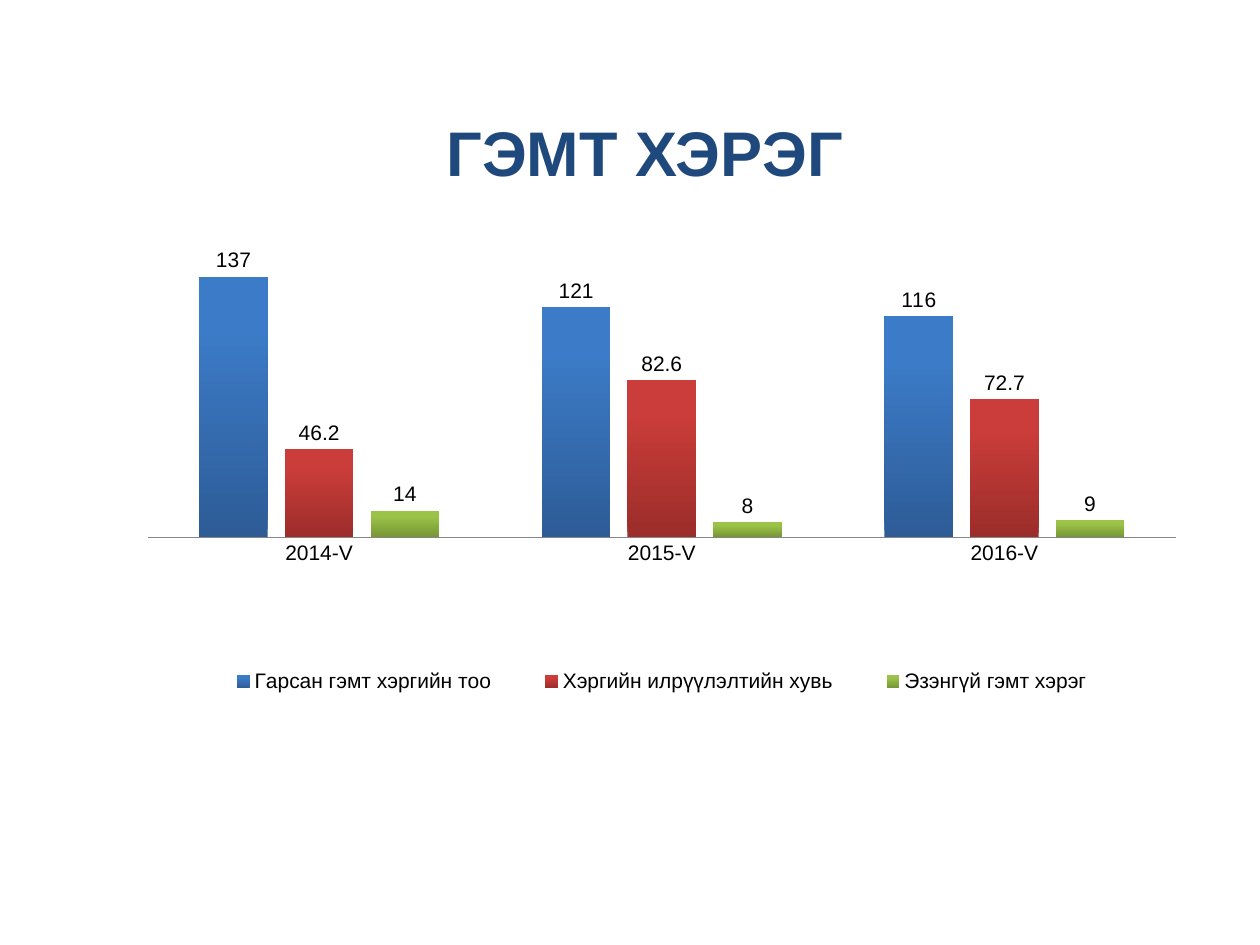
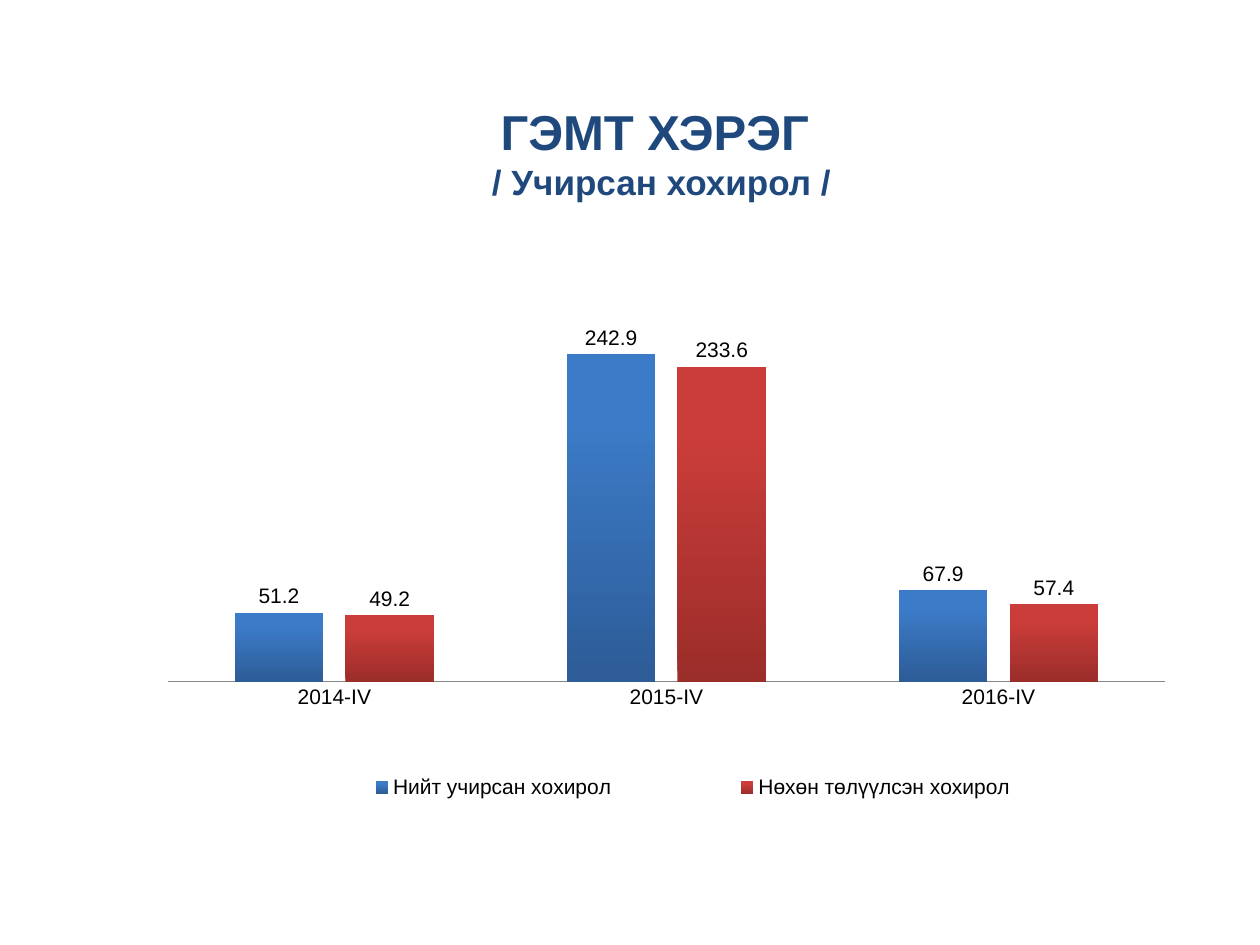
from lxml.etree import SubElement
from pptx import Presentation
from pptx.chart.data import CategoryChartData
from pptx.dml.color import RGBColor
from pptx.enum.chart import XL_CHART_TYPE as ChartType
from pptx.enum.chart import XL_LABEL_POSITION as LabelPos
from pptx.enum.chart import XL_LEGEND_POSITION as LegendPos
from pptx.enum.chart import XL_TICK_MARK as Tick
from pptx.enum.text import MSO_ANCHOR as Anchor
from pptx.enum.text import PP_ALIGN as Align
from pptx.oxml import parse_xml
from pptx.oxml.ns import nsdecls, qn
from pptx.util import Cm, Pt

FONT = "Arial"
NAVY = RGBColor(0x1F, 0x49, 0x7D)
BLACK = RGBColor(0, 0, 0)
WHITE = RGBColor(0xFF, 0xFF, 0xFF)
GRAY = RGBColor(0x86, 0x86, 0x86)
# (bottom, top) of each series' gradient
BAR_SHADES = [
    (RGBColor(0x2D, 0x5C, 0x97), RGBColor(0x3C, 0x7B, 0xC7)),
    (RGBColor(0x9B, 0x2D, 0x2A), RGBColor(0xCB, 0x3D, 0x3A)),
    (RGBColor(0x76, 0x95, 0x35), RGBColor(0x9B, 0xC3, 0x48)),
]


def add_text(p, text, size=28, color=NAVY, bold=True):
    r = p.add_run()
    r.text = text
    font = r.font
    font.name, font.size, font.bold = FONT, Pt(size), bold
    font.color.rgb = color


def set_layout(parent, box, inner=False):
    """Place a chart part by left, top, width and height fractions."""
    old = parent.find(qn("c:layout"))
    if old is not None:
        parent.remove(old)
    layout = parse_xml(f"<c:layout {nsdecls('c')}/>")
    manual = SubElement(layout, qn("c:manualLayout"))
    if inner:
        SubElement(manual, qn("c:layoutTarget")).set("val", "inner")
    for tag in ("xMode", "yMode"):
        SubElement(manual, qn(f"c:{tag}")).set("val", "edge")
    for tag, value in zip("xywh", box):
        SubElement(manual, qn(f"c:{tag}")).set("val", str(value))
    # The layout comes first in the plot area, after the position in a legend
    parent.insert(0 if inner else 1, layout)


class Deck:
    def __init__(self):
        self.prs = Presentation()
        self.prs.slide_width, self.prs.slide_height = Cm(25.4), Cm(19.05)
        self.slide = None

    def new_slide(self):
        self.slide = self.prs.slides.add_slide(self.prs.slide_layouts[6])

    def title(self, box, *lines):
        """Centred title; each line is a (text, size) pair."""
        tf = self.slide.shapes.add_textbox(*map(Cm, box)).text_frame
        tf.word_wrap = True
        tf.vertical_anchor = Anchor.MIDDLE
        p = tf.paragraphs[0]
        p.alignment = Align.CENTER
        for i, (text, size) in enumerate(lines):
            if i:
                p.add_line_break()
            add_text(p, text, size=size)

    def column_chart(self, box, categories, series, maximum, plot_box, legend_box):
        """Clustered columns; each series is (name, values, number format)."""
        data = CategoryChartData()
        data.categories = categories
        for name, values, number_format in series:
            data.add_series(name, values, number_format)
        chart = self.slide.shapes.add_chart(
            ChartType.COLUMN_CLUSTERED, *map(Cm, box), data).chart
        chart.has_title = False
        chart.font.name, chart.font.size = FONT, Pt(12)
        chart.font.color.rgb = BLACK
        self.chart_border(chart)
        self.axes(chart, maximum)

        plot = chart.plots[0]
        plot.gap_width, plot.overlap = 150, -25
        plot.vary_by_categories = False
        for bars, shades, (_, _, number_format) in zip(plot.series, BAR_SHADES, series):
            self.bar_style(bars, shades, number_format)

        chart.has_legend = True
        legend = chart.legend
        legend.position = LegendPos.TOP
        legend.include_in_layout = False
        plot_area = chart._chartSpace.chart.plotArea
        set_layout(plot_area, plot_box, inner=True)
        set_layout(legend._element, legend_box)

    def chart_border(self, chart):
        sp_pr = parse_xml(
            f'<c:spPr {nsdecls("c", "a")}><a:ln w="9525"><a:solidFill>'
            f'<a:srgbClr val="{WHITE}"/></a:solidFill></a:ln></c:spPr>')
        chart._chartSpace.chart.addnext(sp_pr)

    def axes(self, chart, maximum):
        cat_axis, val_axis = chart.category_axis, chart.value_axis
        cat_axis.major_tick_mark = cat_axis.minor_tick_mark = Tick.NONE
        cat_axis.format.line.color.rgb = GRAY
        cat_axis.format.line.width = Pt(0.75)
        val_axis.minimum_scale, val_axis.maximum_scale = 0, maximum
        val_axis.has_major_gridlines = False
        val_axis.visible = False

    def bar_style(self, bars, shades, number_format):
        fill = bars.format.fill
        fill.gradient()
        fill.gradient_angle = 90
        for stop, shade, position in zip(fill.gradient_stops, shades, (0, 0.8)):
            stop.color.rgb = shade
            stop.position = position
        labels = bars.data_labels
        labels.show_value = True
        labels.position = LabelPos.OUTSIDE_END
        labels.number_format = number_format
        labels.number_format_is_linked = False


def main():
    deck = Deck()

    deck.new_slide()
    deck.title((4.01, 2.11, 17.98, 1.9), ("ГЭМТ ХЭРЭГ", 36))
    deck.column_chart(
        (2.54, 4.24, 21.39, 11),
        ["2014-V", "2015-V", "2016-V"],
        [("Гарсан гэмт хэргийн тоо", (137, 121, 116), "General"),
         ("Хэргийн илрүүлэлтийн хувь", (46.2, 82.6, 72.7), "0.0"),
         ("Эзэнгүй гэмт хэрэг", (14, 8, 9), "General")],
        maximum=160,
        plot_box=(0.02, 0.04, 0.97, 0.56),
        legend_box=(0.06, 0.82, 0.89, 0.09))

    deck.new_slide()
    deck.title((2.54, 1.47, 21.59, 3.18),
               ("ГЭМТ ХЭРЭГ ", 28), ("/ Учирсан хохирол /", 20))
    deck.column_chart(
        (2.74, 4.45, 21.39, 12.57),
        ["2014-IV", "2015-IV", "2016-IV"],
        [("Нийт учирсан хохирол", (51.2, 242.9, 67.9), "0.0"),
         ("Нөхөн төлүүлсэн хохирол", (49.2, 233.6, 57.4), "0.0")],
        maximum=300,
        plot_box=(0.03, 0.09, 0.94, 0.65),
        legend_box=(0.11, 0.87, 0.83, 0.08))

    deck.prs.save("out.pptx")


if __name__ == "__main__":
    main()
